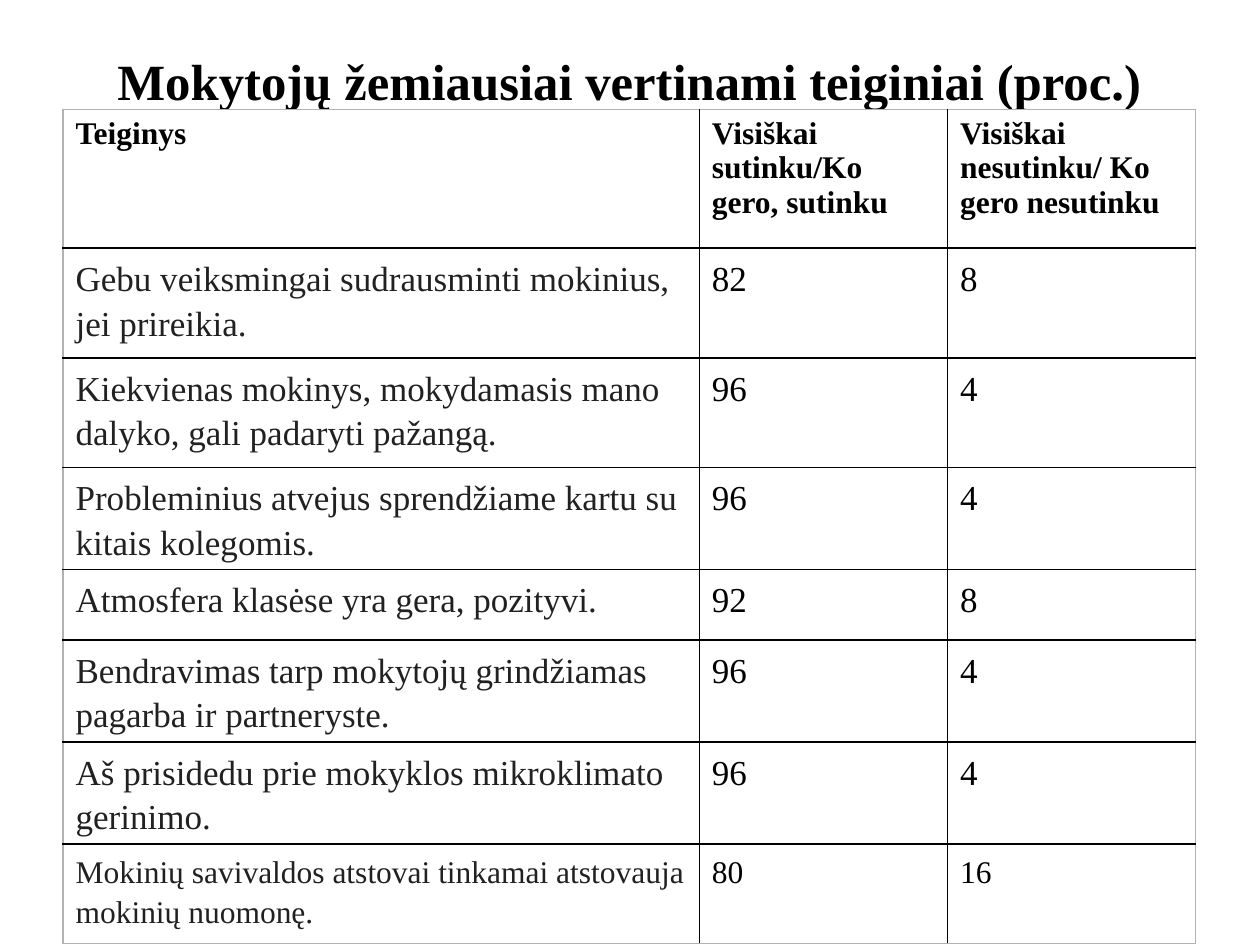
from lxml.etree import SubElement
from pptx import Presentation
from pptx.dml.color import RGBColor as RGB
from pptx.enum.text import MSO_ANCHOR as Anchor, PP_ALIGN as Align
from pptx.oxml.ns import qn
from pptx.util import Inches, Pt

COLORS = {"ink": "000000", "statement": "212121", "paper": "FFFFFF", "frame": "B2B2B2"}
FONT = "Times New Roman"
TITLE_ONLY = 5

HEADER = ["Teiginys", "Visiškai sutinku/Ko gero, sutinku", "Visiškai nesutinku/ Ko gero nesutinku"]
# statement, agree, disagree, row height in inches, text size
STATEMENTS = [
    ("Gebu veiksmingai sudrausminti mokinius, jei prireikia.", 82, 8, 0.87, 20),
    ("Kiekvienas mokinys, mokydamasis mano dalyko, gali padaryti pažangą.", 96, 4, 0.87, 20),
    ("Probleminius atvejus sprendžiame kartu su kitais kolegomis.", 96, 4, 0.79, 20),
    ("Atmosfera klasėse yra gera, pozityvi.", 92, 8, 0.56, 20),
    ("Bendravimas tarp mokytojų grindžiamas pagarba ir partneryste.", 96, 4, 0.81, 20),
    ("Aš prisidedu prie mokyklos mikroklimato gerinimo.", 96, 4, 0.76, 20),
    ("Mokinių savivaldos atstovai tinkamai atstovauja mokinių nuomonę.", 80, 16, 0.79, 18),
]
HEADER_HEIGHT = 1.1
COLUMN_WIDTHS = [5.05, 1.97, 1.97]


class Deck:
    def __init__(self, width, height):
        self.prs = Presentation()
        self.prs.slide_width, self.prs.slide_height = Inches(width), Inches(height)
        self.s = self.prs.slides.add_slide(self.prs.slide_layouts[TITLE_ONLY])

    def box(self, x, y, w, h):
        """Turn shares of the slide's size into lengths."""
        width, height = self.prs.slide_width, self.prs.slide_height
        return int(x * width), int(y * height), int(w * width), int(h * height)

    def add_text(self, tf, text, size, color="ink", bold=False, spacing=None):
        p = tf.paragraphs[0]
        if spacing:
            p.line_spacing = spacing
        r = p.add_run()
        r.text = text
        r.font.name, r.font.size, r.font.bold = FONT, Pt(size), bold
        r.font.color.rgb = RGB.from_string(COLORS[color])
        return p

    def title(self, text, size, *place):
        sp = self.s.shapes.title
        sp.left, sp.top, sp.width, sp.height = self.box(*place)
        tf = sp.text_frame
        tf.word_wrap, tf.vertical_anchor = True, Anchor.MIDDLE
        self.add_text(tf, text, size, bold=True).alignment = Align.CENTER

    def table(self, heights, widths, *corner):
        x, y, _, _ = self.box(*corner, 0, 0)
        frame = self.s.shapes.add_table(len(heights), len(widths), x, y,
                                        Inches(sum(widths)), Inches(sum(heights)))
        table = frame.table
        table.first_row = table.horz_banding = False
        for row, height in zip(table.rows, heights):
            row.height = Inches(height)
        for column, width in zip(table.columns, widths):
            column.width = Inches(width)
        last_row, last_column = len(heights) - 1, len(widths) - 1
        for i in range(len(heights)):
            for j in range(len(widths)):
                cell = table.cell(i, j)
                outer = {"L": j == 0, "R": j == last_column, "T": i == 0, "B": i == last_row}
                self.border(cell, outer)
                cell.fill.solid()
                cell.fill.fore_color.rgb = RGB.from_string(COLORS["paper"])
        return table

    def border(self, cell, outer):
        """Draw grey lines on the table's outer sides and black ones inside."""
        tc_pr = cell._tc.get_or_add_tcPr()
        for side, is_outer in outer.items():
            line = SubElement(tc_pr, qn(f"a:ln{side}"), w=str(Pt(1)))
            fill = SubElement(line, qn("a:solidFill"))
            SubElement(fill, qn("a:srgbClr"), val=COLORS["frame" if is_outer else "ink"])


def main():
    deck = Deck(10, 7.5)
    deck.title("Mokytojų žemiausiai vertinami teiginiai (proc.)", 29, 0.05, 0.04, 0.9, 0.09)

    heights = [HEADER_HEIGHT] + [height for *_, height, _ in STATEMENTS]
    table = deck.table(heights, COLUMN_WIDTHS, 0.05, 0.116)
    for j, heading in enumerate(HEADER):
        deck.add_text(table.cell(0, j).text_frame, heading, 18, bold=True)
    for i, (*values, _, size) in enumerate(STATEMENTS, 1):
        for j, value in enumerate(values):
            color = "ink" if j else "statement"
            deck.add_text(table.cell(i, j).text_frame, str(value), size, color, spacing=1.15)
    deck.prs.save("out.pptx")


if __name__ == "__main__":
    main()
